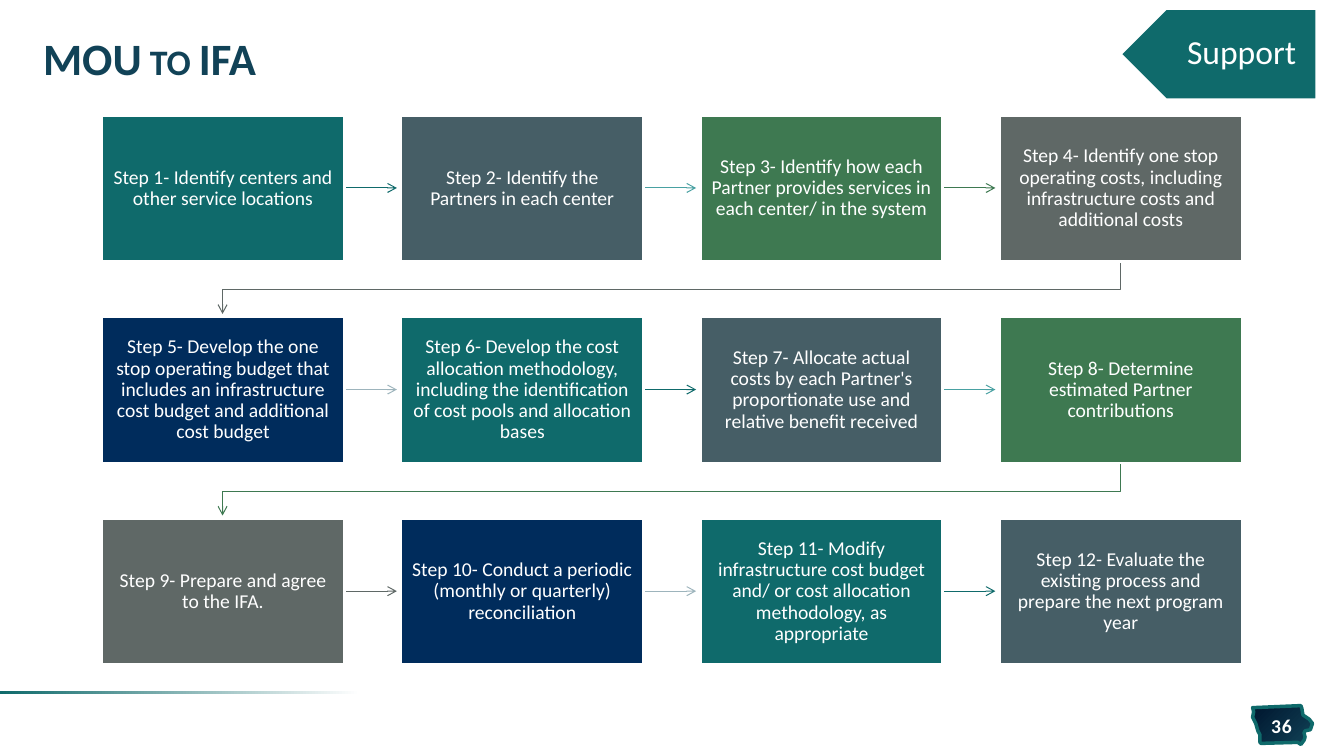
"""Build the MOU to IFA slide: twelve numbered steps in a three-row flow."""
from lxml import etree
from pptx import Presentation
from pptx.dml.color import RGBColor
from pptx.enum.shapes import MSO_CONNECTOR, MSO_SHAPE
from pptx.enum.text import MSO_ANCHOR, MSO_AUTO_SIZE, PP_ALIGN
from pptx.oxml.ns import qn
from pptx.util import Pt

PX = 9525
RECT, PENTAGON = MSO_SHAPE.RECTANGLE, MSO_SHAPE.PENTAGON
STRAIGHT = MSO_CONNECTOR.STRAIGHT
MIDDLE, NO_FIT = MSO_ANCHOR.MIDDLE, MSO_AUTO_SIZE.NONE
LEFT, CENTER = PP_ALIGN.LEFT, PP_ALIGN.CENTER

COLORS = {
    "teal": "0F6A6B", "slate": "465E66", "green": "3E7951", "gray": "5F6866",
    "navy": "002C5C", "aqua": "49A1A2", "mist": "9DB4BC", "title": "114257",
    "night": "00162E", "white": "FFFFFF",
}
BOX_COLORS = ["teal", "slate", "green", "gray", "navy"]
ARROW_COLORS = ["teal", "aqua", "green", "gray", "mist"]
STEPS = [
    "Identify centers and other service locations",
    "Identify the Partners in each center",
    "Identify how each Partner provides services in each center/ in the system",
    "Identify one stop operating costs, including infrastructure costs and additional costs",
    "Develop the one stop operating budget that includes an infrastructure cost budget "
    "and additional cost budget",
    "Develop the cost allocation methodology, including the identification of cost pools "
    "and allocation bases",
    "Allocate actual costs by each Partner's proportionate use and relative benefit received",
    "Determine estimated Partner contributions",
    "Prepare and agree to the IFA.",
    "Conduct a periodic (monthly or quarterly) reconciliation",
    "Modify infrastructure cost budget and/ or cost allocation methodology, as appropriate",
    "Evaluate the existing process and prepare the next program year",
]
COLUMNS = 4
GRID_LEFT, GRID_TOP = 97, 110
BOX_W, BOX_H = 231, 139
PITCH_X, PITCH_Y = 285, 192
ARROW_LEN = 50
STATE_OUTLINE = [
    (1239, 672), (1193, 674), (1194, 678), (1193, 683), (1196, 689), (1198, 696),
    (1200, 700), (1200, 707), (1201, 708), (1236, 707), (1239, 709), (1242, 705),
    (1243, 702), (1242, 698), (1243, 696), (1248, 695), (1250, 689), (1247, 685),
    (1244, 683), (1241, 681), (1240, 675),
]


def rgb(name):
    return RGBColor.from_string(COLORS[name])


def write(sp, text, size=14, color="white", bold=False, align=CENTER,
          spacing=0.9, insets=(10, 10, 10, 10), **run_attrs):
    tf = sp.text_frame
    tf.word_wrap = True
    tf.auto_size = NO_FIT
    tf.vertical_anchor = MIDDLE
    tf.margin_left, tf.margin_top, tf.margin_right, tf.margin_bottom = (
        inset * PX for inset in insets)
    p = tf.paragraphs[0]
    p.alignment = align
    p.line_spacing = spacing
    r = p.add_run()
    r.text = text
    r.font.name = "Calibri"
    r.font.size = Pt(size)
    r.font.bold = bold
    r.font.color.rgb = rgb(color)
    for key, value in run_attrs.items():
        r.font._element.set(key, value)


prs = Presentation()
prs.slide_width, prs.slide_height = 1280 * PX, 720 * PX
s = prs.slides.add_slide(prs.slide_layouts[5])
shapes = s.shapes

title = shapes.title
title.left, title.top, title.width, title.height = 31 * PX, 23 * PX, 1218 * PX, 72 * PX
write(title, "MOU to IFA", size=32, color="title", bold=True, align=LEFT,
      spacing=0.85, insets=(10, 5, 10, 5), cap="small")

builder = shapes.build_freeform(*STATE_OUTLINE[0], scale=PX)
builder.add_line_segments(STATE_OUTLINE[1:], close=True)
badge = builder.convert_to_shape()
badge.line.color.rgb = rgb("teal")
badge.line.width = Pt(2.5)
footer_rule = shapes.add_shape(RECT, 0, 658 * PX, 365 * PX, 3 * PX)
footer_rule.line.fill.background()
for sp, angle, stops in [
    (badge, 315, [("night", 0), ("title", 1)]),
    (footer_rule, 0, [("teal", 0), ("white", 0.94)]),
]:
    sp.shadow.inherit = False
    sp.fill.gradient()
    sp.fill.gradient_angle = angle
    for stop, (color, position) in zip(sp.fill.gradient_stops, stops):
        stop.color.rgb = rgb(color)
        stop.position = position

number = shapes.add_textbox(1196 * PX, 680 * PX, 49 * PX, 22 * PX)
write(number, "36", bold=True, spacing=1.0, insets=(0, 5, 0, 5), spc="50")

for i, step in enumerate(STEPS):
    row, column = divmod(i, COLUMNS)
    x, y = GRID_LEFT + column * PITCH_X, GRID_TOP + row * PITCH_Y
    if i < len(STEPS) - 1:
        if column < COLUMNS - 1:
            start, middle = x + BOX_W, y + BOX_H // 2
            arrow = shapes.add_connector(STRAIGHT, start * PX, middle * PX,
                                         (start + ARROW_LEN) * PX, middle * PX)
        else:
            start, end = x + BOX_W // 2, GRID_LEFT + BOX_W // 2
            bottom = y + BOX_H
            turn = bottom + 27
            builder = shapes.build_freeform(start, bottom, scale=PX)
            builder.add_line_segments(
                [(start, turn), (end, turn), (end, bottom + ARROW_LEN)], close=False)
            arrow = builder.convert_to_shape()
            arrow.fill.background()
        arrow.line.color.rgb = rgb(ARROW_COLORS[i % len(ARROW_COLORS)])
        arrow.line.width = Pt(0.75)
        sp_pr = arrow._element.spPr
        etree.SubElement(sp_pr.find(qn("a:ln")), qn("a:tailEnd"), type="arrow")
        etree.SubElement(sp_pr, qn("a:effectLst"))
    box = shapes.add_shape(RECT, x * PX, y * PX, BOX_W * PX, BOX_H * PX)
    box.shadow.inherit = False
    box.fill.solid()
    box.fill.fore_color.rgb = rgb(BOX_COLORS[i % len(BOX_COLORS)])
    box.line.color.rgb = rgb("white")
    box.line.width = Pt(2)
    write(box, f"Step {i + 1}- {step}")

tag = shapes.add_shape(PENTAGON, 1067 * PX, 8 * PX, 187 * PX, 87 * PX)
tag.rotation = 180
tag.shadow.inherit = False
tag.fill.solid()
tag.fill.fore_color.rgb = rgb("teal")
tag.line.color.rgb = rgb("white")
tag.line.width = Pt(2)
tag_label = shapes.add_textbox(1090 * PX, 8 * PX, 165 * PX, 87 * PX)
write(tag_label, "Support", size=24, insets=(38, 10, 18, 10))

prs.save("out.pptx")
